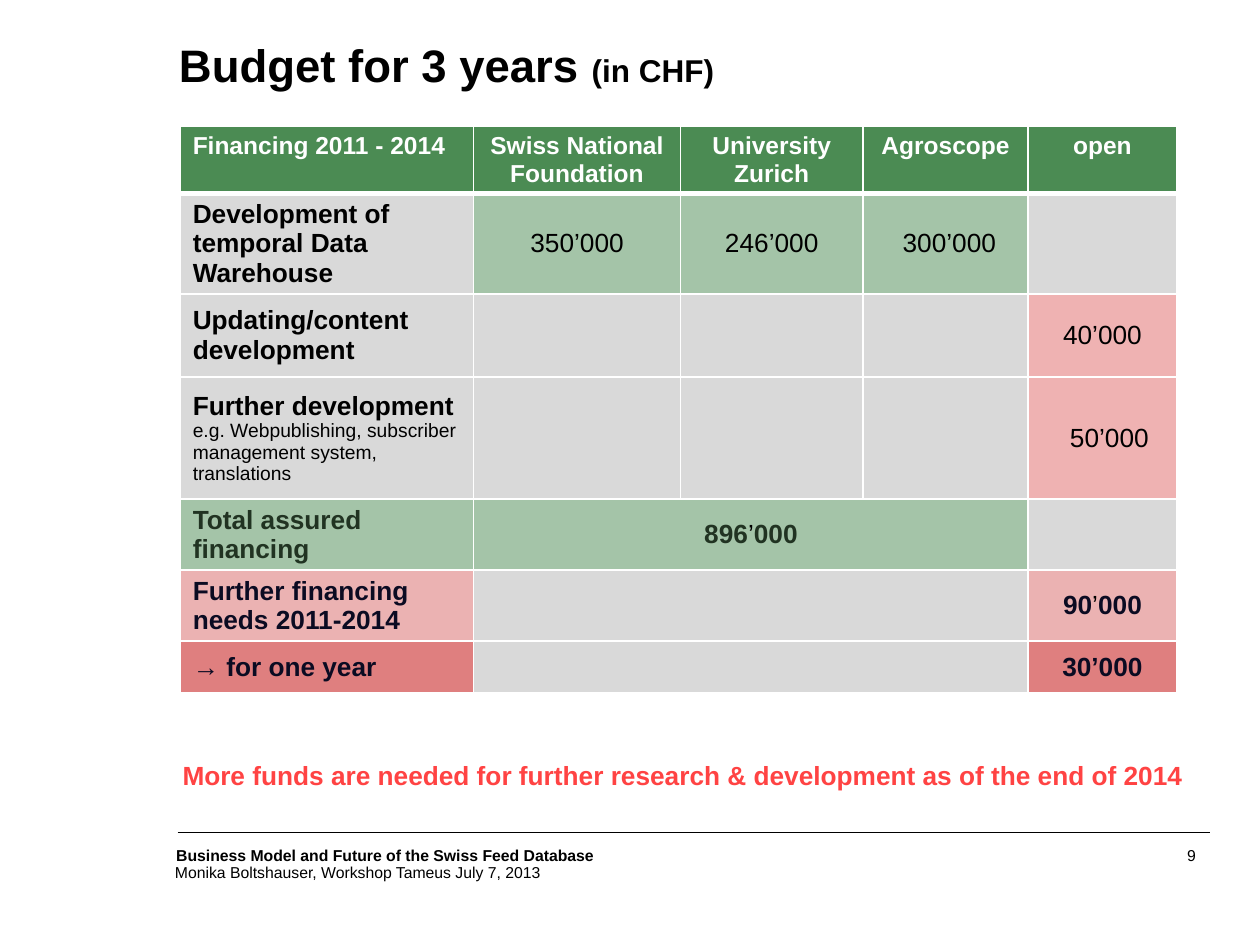
from dataclasses import dataclass
from typing import Optional

import pptx
import pptx.dml.color
import pptx.enum.shapes
import pptx.enum.text
import pptx.oxml
import pptx.oxml.ns
import pptx.util
from pptx.util import Inches

ALIGN = pptx.enum.text.PP_ALIGN
ANCHOR = pptx.enum.text.MSO_ANCHOR
BLACK, WHITE, GREY = "000000", "FFFFFF", "D9D9D9"
GREEN, RED, DARK_RED = "4B8B53", "CC0000", "C00000"
DARK_GREEN, NAVY = "213322", "0B0B22"


@dataclass
class Run:
    text: str
    size: float = 15
    color: str = BLACK
    bold: bool = False
    new_line: bool = False


@dataclass
class Cell:
    runs: tuple[Run, ...] = ()
    fill: str = GREY
    alpha: int = 100
    indent: float = 0
    span: int = 1


@dataclass
class Box:
    left: float
    top: float
    width: float
    height: float
    run: Run
    inset: bool = True
    align: ALIGN = ALIGN.LEFT


def rgb(value: str) -> pptx.dml.color.RGBColor:
    return pptx.dml.color.RGBColor.from_string(value)


def add_runs(p, runs: tuple[Run, ...]) -> None:
    for run in runs:
        if run.new_line:
            p.add_line_break()
        r = p.add_run()
        r.text = run.text
        r.font.name = "Arial"
        r.font.size = pptx.util.Pt(run.size)
        r.font.bold = run.bold
        r.font.color.rgb = rgb(run.color)


def clear_margins(tf) -> None:
    tf.margin_left = tf.margin_right = tf.margin_top = tf.margin_bottom = 0


def add_box(s, box: Box) -> None:
    sp = s.shapes.add_textbox(*map(Inches, (box.left, box.top, box.width, box.height)))
    tf = sp.text_frame
    tf.word_wrap = True
    if not box.inset:
        clear_margins(tf)
    p = tf.paragraphs[0]
    p.alignment = box.align
    add_runs(p, (box.run,))


def set_borders(cell, top: float, bottom: float) -> None:
    tc_pr = cell._tc.get_or_add_tcPr()
    for side, width in (("L", 1), ("R", 1), ("T", top), ("B", bottom)):
        tc_pr.append(pptx.oxml.parse_xml(
            f'<a:ln{side} {pptx.oxml.ns.nsdecls("a")} w="{pptx.util.Pt(width)}">'
            f'<a:solidFill><a:srgbClr val="{WHITE}"/></a:solidFill></a:ln{side}>'))


def set_fill(cell, color: str, alpha: int) -> None:
    cell.fill.solid()
    cell.fill.fore_color.rgb = rgb(color)
    if alpha < 100:
        solid = cell._tc.tcPr.find(pptx.oxml.ns.qn("a:solidFill"))
        solid[0].append(pptx.oxml.parse_xml(
            f'<a:alpha {pptx.oxml.ns.nsdecls("a")} val="{alpha * 1000}"/>'))


def fill_cell(cell, spec: Cell, row: int, col: int) -> None:
    set_borders(cell, 3 if row == 1 else 1, 3 if row == 0 else 1)
    set_fill(cell, spec.fill, spec.alpha)
    cell.vertical_anchor = ANCHOR.MIDDLE if row else ANCHOR.TOP
    cell.margin_left = Inches(0.1 + spec.indent)
    p = cell.text_frame.paragraphs[0]
    p.alignment = ALIGN.CENTER if col else ALIGN.LEFT
    add_runs(p, spec.runs)


def add_budget(s, rows: list[list[Cell]], widths: list[float], heights: list[float]) -> None:
    frame = s.shapes.add_table(len(rows), len(widths), Inches(1.43), Inches(1),
                               Inches(sum(widths)), Inches(sum(heights)))
    table = frame.table
    for column, width in zip(table.columns, widths):
        column.width = Inches(width)
    for i, (specs, height) in enumerate(zip(rows, heights)):
        table.rows[i].height = Inches(height)
        j = 0
        for spec in specs:
            cell = table.cell(i, j)
            if spec.span > 1:
                cell.merge(table.cell(i, j + spec.span - 1))
            fill_cell(cell, spec, i, j)
            j += spec.span


def head(text: str) -> Cell:
    return Cell((Run(text, 14, WHITE, True),), GREEN)


def label(text: str, color: str = BLACK, fill: str = GREY, alpha: int = 100,
          note: Optional[str] = None) -> Cell:
    runs = (Run(text, color=color, bold=True),)
    return Cell(runs + ((Run(note, 11, new_line=True),) if note else ()), fill, alpha)


def amount(text: str, fill: str, alpha: int, indent: float = 0) -> Cell:
    return Cell((Run(text),), fill, alpha, indent)


def total(thousands: str, color: str, fill: str, alpha: int, span: int = 1) -> Cell:
    runs = (Run(thousands, color=color, bold=True), Run("’"),
            Run("000", color=color, bold=True))
    return Cell(runs, fill, alpha, span=span)


def main() -> None:
    prs = pptx.Presentation()
    prs.slide_width, prs.slide_height = Inches(10), Inches(7.5)
    s = prs.slides.add_slide(prs.slide_layouts[5])

    title = s.shapes.title
    title.left, title.top, title.width, title.height = map(Inches, (1.42, 0.34, 8.16, 0.62))
    tf = title.text_frame
    clear_margins(tf)
    tf.vertical_anchor = ANCHOR.TOP
    p = tf.paragraphs[0]
    p.alignment = ALIGN.LEFT
    p.line_spacing = 0.9
    add_runs(p, (Run("Budget for 3 years ", 26, bold=True), Run("(in CHF)", 18, bold=True)))

    names = ("Financing 2011 - 2014", "Swiss National Foundation", "University Zurich",
             "Agroscope", "open")
    rows = [
        [head(name) for name in names],
        [label("Development of temporal Data Warehouse"), amount("350’000", GREEN, 50),
         amount("246’000", GREEN, 50), amount("300’000", GREEN, 50, 0.06), Cell()],
        [label("Updating/content development"), Cell(), Cell(), Cell(),
         amount("40’000", RED, 30)],
        [label("Further development",
               note="e.g. Webpublishing, subscriber management system, translations"),
         Cell(), Cell(), Cell(), amount("50’000", RED, 30, 0.11)],
        [label("Total assured financing", DARK_GREEN, GREEN, 50),
         total("896", DARK_GREEN, GREEN, 50, 3), Cell()],
        [label("Further financing needs 2011-2014", NAVY, DARK_RED, 30),
         Cell(span=3), total("90", NAVY, DARK_RED, 30)],
        [label("→ for one year", NAVY, DARK_RED, 50),
         Cell(span=3), label("30’000", NAVY, DARK_RED, 50)],
    ]
    add_budget(s, rows, [2.33, 1.64, 1.45, 1.31, 1.18],
               [0.53, 0.79, 0.66, 0.97, 0.56, 0.56, 0.41])

    line = s.shapes.add_connector(pptx.enum.shapes.MSO_CONNECTOR.STRAIGHT,
                                  *map(Inches, (1.41, 6.61, 9.6, 6.61)))
    line.line.color.rgb = rgb(BLACK)
    line.line.width = pptx.util.Pt(0.75)
    line._element.spPr.append(
        pptx.oxml.parse_xml(f'<a:effectLst {pptx.oxml.ns.nsdecls("a")}/>'))

    boxes = [
        Box(1.35, 5.98, 8.25, 0.35, Run(
            "More funds are needed for further research & development as of the end of 2014",
            15, "FF4343", True)),
        Box(1.3, 6.66, 3.62, 0.25,
            Run("Business Model and Future of the Swiss Feed Database", 9, bold=True)),
        Box(1.29, 6.8, 3.52, 0.25, Run("Monika Boltshauser, Workshop Tameus July 7, 2013", 9)),
        Box(7.04, 6.71, 2.45, 0.16, Run("9", 9), False, ALIGN.RIGHT),
    ]
    for box in boxes:
        add_box(s, box)
    prs.save("out.pptx")


if __name__ == "__main__":
    main()
